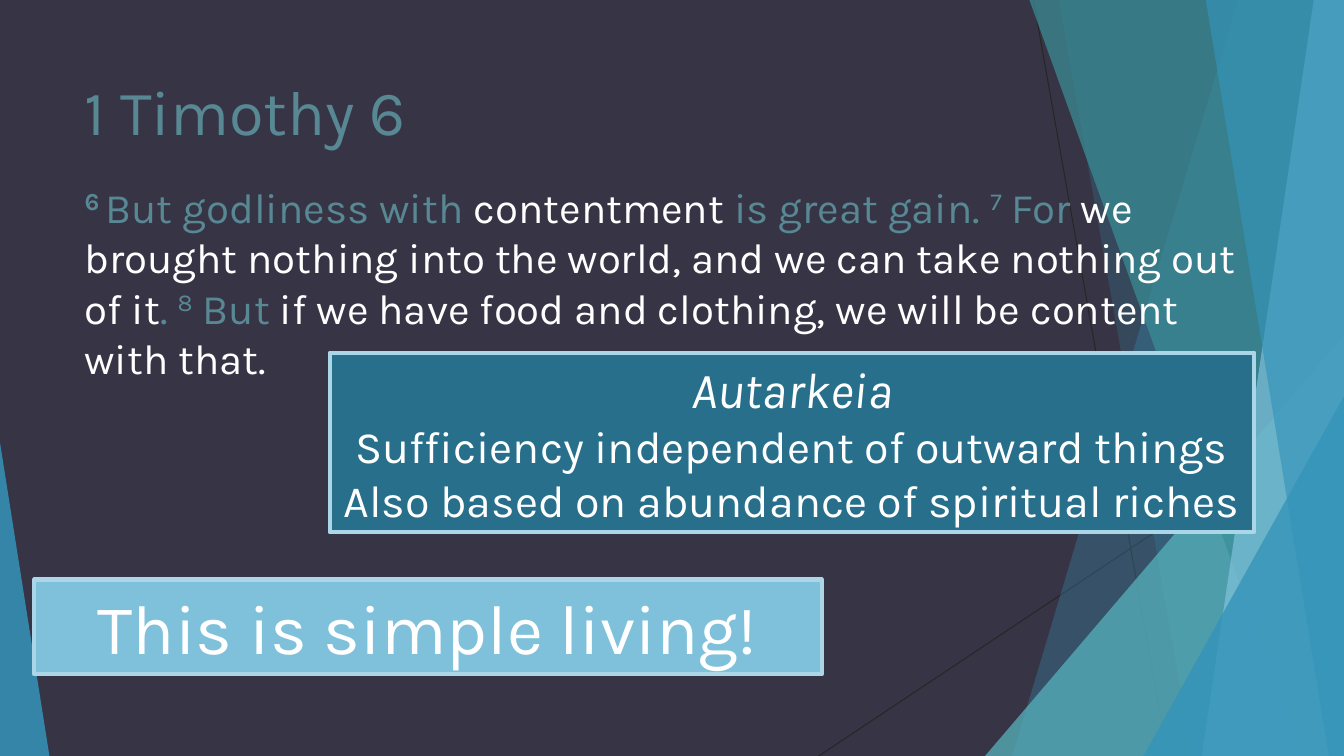
from lxml import etree
from pptx import Presentation
from pptx.dml.color import RGBColor
from pptx.enum.shapes import MSO_CONNECTOR, MSO_SHAPE
from pptx.enum.text import MSO_ANCHOR, MSO_AUTO_SIZE, PP_ALIGN
from pptx.oxml.ns import qn
from pptx.util import Inches, Pt

LINE = MSO_CONNECTOR.STRAIGHT
TRIANGLE = MSO_SHAPE.ISOSCELES_TRIANGLE
RECTANGLE = MSO_SHAPE.RECTANGLE
TOP, MIDDLE = MSO_ANCHOR.TOP, MSO_ANCHOR.MIDDLE
GROW = MSO_AUTO_SIZE.SHAPE_TO_FIT_TEXT
CENTER = PP_ALIGN.CENTER

FONT = "Karla"
WIDTH, HEIGHT = 13.33, 7.5
COLORS = {
    "background": "373545",
    "hairline": "262626",
    "blue": "3494BA",
    "teal": "58B6C0",
    "dark teal": "3A8F98",
    "light blue": "7FC1DB",
    "deep blue": "276F8B",
    "border": "AAD6E7",
    "muted": "588894",
    "white": "FFFFFF",
}


def paint(shape, color, opacity=100):
    """Give a shape a flat, partly transparent fill without line or shadow."""
    shape.shadow.inherit = False
    shape.fill.solid()
    shape.fill.fore_color.rgb = RGBColor.from_string(COLORS[color])
    shape.line.fill.background()
    if opacity < 100:
        tint = shape.fill._xPr.find(qn("a:solidFill"))[0]
        etree.SubElement(tint, qn("a:alpha"), val=str(opacity * 1000))


def add_span(para, text, size, color):
    span = para.add_run()
    span.text = text
    span.font.name = FONT
    span.font.size = Pt(size)
    span.font.color.rgb = RGBColor.from_string(COLORS[color])
    return span


deck = Presentation()
deck.slide_width, deck.slide_height = Inches(WIDTH), Inches(HEIGHT)
page = deck.slides.add_slide(deck.slide_layouts[6])
page.background.fill.solid()
page.background.fill.fore_color.rgb = RGBColor.from_string(COLORS["background"])

# Thin crossing lines
for ends in [(10.25, 0, 11.58, HEIGHT), (WIDTH, 4.03, 8.12, HEIGHT)]:
    hairline = page.shapes.add_connector(LINE, *map(Inches, ends))
    hairline.line.color.rgb = RGBColor.from_string(COLORS["hairline"])
    hairline.line.width = Pt(0.75)
    etree.SubElement(hairline._element.spPr, qn("a:effectLst"))

# Facets: bands give the x of their left edge at top and bottom and run to the
# right page edge; triangles give left, top, width and tip position
facets = [
    ("band", (12.28, 10.04), "blue", 30),
    ("band", (10.5, 11.83), "blue", 20),
    ("triangle", (9.77, 3.33, 3.56, 1), "teal", 72),
    ("band", (10.21, 12.91), "dark teal", 70),
    ("band", (13.03, 11.92), "light blue", 70),
    ("band", (11.96, 13.18), "blue", 65),
    ("triangle", (11.34, 3.93, 1.99, 1), "blue", 80),
    ("triangle", (0, 4.39, 0.49, 0), "blue", 85),
]
for kind, place, color, opacity in facets:
    if kind == "band":
        top_x, bottom_x = place
        outline = page.shapes.build_freeform(Inches(top_x), 0)
        corners = [(WIDTH, 0), (WIDTH, HEIGHT), (bottom_x, HEIGHT)]
        outline.add_line_segments([(Inches(x), Inches(y)) for x, y in corners])
        facet = outline.convert_to_shape()
    else:
        left, top, width, tip = place
        frame = (left, top, width, HEIGHT - top)
        facet = page.shapes.add_shape(TRIANGLE, *map(Inches, frame))
        facet.adjustments[0] = tip
    paint(facet, color, opacity)

# Title and verses: text, colour, superscript
verses = [
    ("6 ", "muted", True),
    ("But godliness with ", "muted", False),
    ("contentment", "white", False),
    (" is great gain. ", "muted", False),
    ("7", "muted", True),
    (" For ", "muted", False),
    ("we brought nothing into the world, and we can take nothing out of it", "white", False),
    (". ", "muted", False),
    ("8", "muted", True),
    (" But ", "muted", False),
    ("if we have food and clothing, we will be content with that.", "white", False),
]
text_boxes = [
    ((0.74, 0.67, 9.4, 1.05), 45, [("1 Timothy 6", "muted", False)]),
    ((0.74, 1.75, 11.85, 4.81), 30, verses),
]
for frame, size, spans in text_boxes:
    box = page.shapes.add_textbox(*map(Inches, frame))
    box.text_frame.word_wrap = True
    box.text_frame.vertical_anchor = TOP
    para = box.text_frame.paragraphs[0]
    for text, color, raised in spans:
        span = add_span(para, text, size, color)
        if raised:
            span.font._element.set("baseline", "30000")
            span.font.bold = text == "6 "

# Callouts: text, size, italic for each line
callouts = [
    ((3.27, 3.5, 9.17, 1.78), "deep blue", [
        ("Autarkeia", 36, True),
        ("Sufficiency independent of outward things", 32, False),
        ("Also based on abundance of spiritual riches", 32, False),
    ]),
    ((0.34, 5.75, 7.81, 0.94), "light blue", [("This is simple living!", 50, False)]),
]
for frame, color, lines in callouts:
    box = page.shapes.add_shape(RECTANGLE, *map(Inches, frame))
    paint(box, color)
    box.line.color.rgb = RGBColor.from_string(COLORS["border"])
    box.line.width = Pt(3)
    body = box.text_frame
    body.word_wrap = True
    body.auto_size = GROW
    body.vertical_anchor = MIDDLE
    for index, (text, size, italic) in enumerate(lines):
        para = body.add_paragraph() if index else body.paragraphs[0]
        para.alignment = CENTER
        add_span(para, text, size, "white").font.italic = italic

deck.save("out.pptx")
